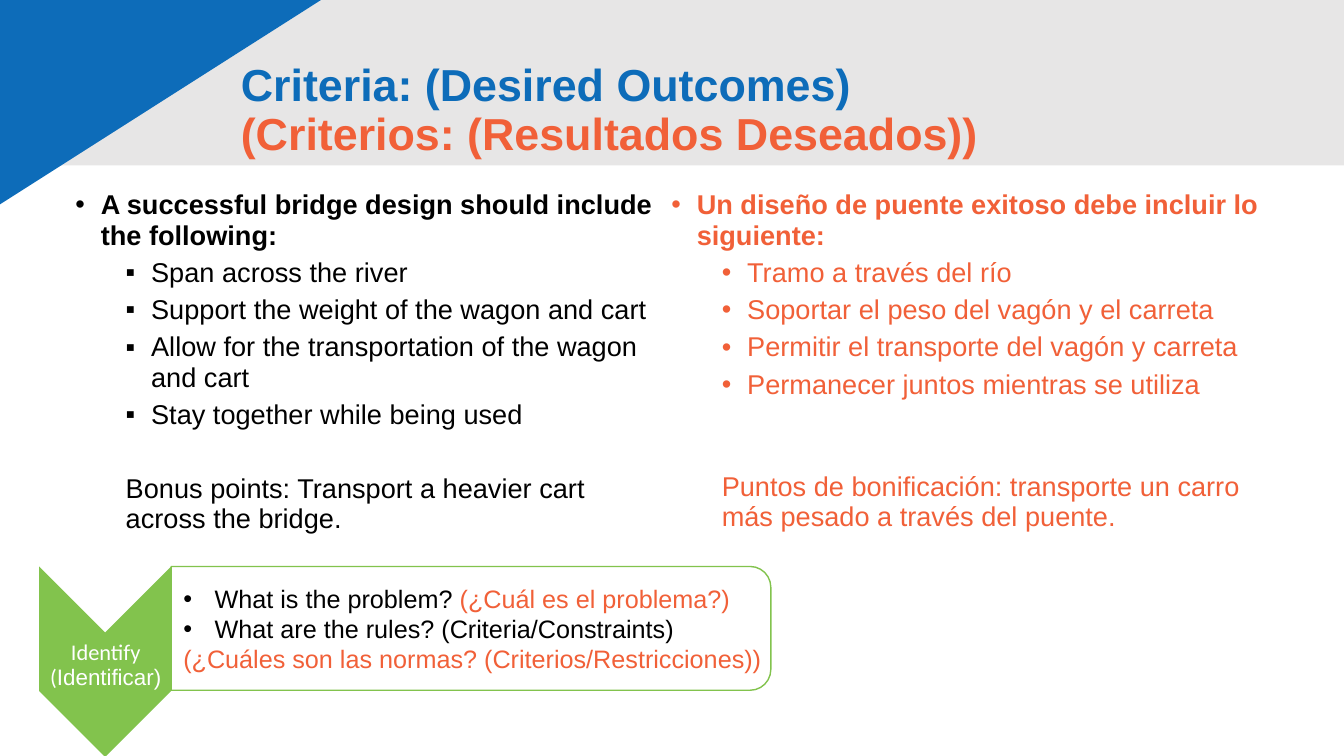
from lxml import etree
from pptx import Presentation
from pptx.dml.color import RGBColor
from pptx.enum.shapes import MSO_SHAPE
from pptx.enum.text import MSO_ANCHOR, PP_ALIGN
from pptx.oxml.ns import qn
from pptx.util import Cm, Pt

RECT = MSO_SHAPE.RECTANGLE
WEDGE = MSO_SHAPE.RIGHT_TRIANGLE
ARROW = MSO_SHAPE.CHEVRON
PANEL = MSO_SHAPE.ROUND_2_SAME_RECTANGLE
TOP, MIDDLE = MSO_ANCHOR.TOP, MSO_ANCHOR.MIDDLE
LEFT, CENTER = PP_ALIGN.LEFT, PP_ALIGN.CENTER

HUES = {"blue": "0D6CB9", "coral": "F16038", "gray": "E7E6E6",
        "green": "82C34D", "black": "000000", "white": "FFFFFF"}


class Deck:
    def __init__(self):
        self.file = Presentation()
        self.file.slide_width, self.file.slide_height = Cm(33.87), Cm(19.05)
        self.slide = self.file.slides.add_slide(self.file.slide_layouts[6])
        self.face = "Arial"

    def color(self, name):
        return RGBColor.from_string(HUES[name])

    def shape(self, kind, box, fill, turn=0, line=None, alpha=None):
        item = self.slide.shapes.add_shape(kind, *map(Cm, box))
        item.shadow.inherit = False
        item.rotation = turn
        item.fill.solid()
        item.fill.fore_color.rgb = self.color(fill)
        if alpha:
            tint = item.fill._xPr.find(".//" + qn("a:srgbClr"))
            etree.SubElement(tint, qn("a:alpha")).set("val", str(alpha * 1000))
        if line:
            item.line.color.rgb = self.color(line)
            item.line.width = Pt(1)
        else:
            item.line.fill.background()

    def text(self, box, anchor=TOP, pads=(0.25, 0.13, 0.25, 0.13)):
        frame = self.slide.shapes.add_textbox(*map(Cm, box)).text_frame
        frame.word_wrap = True
        frame.vertical_anchor = anchor
        (frame.margin_left, frame.margin_top,
         frame.margin_right, frame.margin_bottom) = map(Cm, pads)
        return frame

    def para(self, frame, parts, size, bold=False, space=1.0, before=0,
             align=LEFT, mark=None, indent=0, hang=0):
        """Each part is (text, color) or (text, color, font)."""
        first = not frame.text
        para = frame.paragraphs[0] if first else frame.add_paragraph()
        props = para._p.get_or_add_pPr()
        props.set("marL", str(Cm(indent)))
        props.set("indent", str(-Cm(hang)))
        if mark:
            etree.SubElement(props, qn("a:buFont")).set("typeface", "Arial")
            etree.SubElement(props, qn("a:buChar")).set("char", mark)
        para.alignment = align
        para.line_spacing = space
        para.space_before = Pt(0 if first else before)
        for words, hue, *face in parts:
            run = para.add_run()
            run.text = words
            run.font.name = face[0] if face else self.face
            run.font.size = Pt(size)
            run.font.bold = bold
            run.font.color.rgb = self.color(hue)
        return para

    def column(self, box, hue, mark, head, items, bonus, gap):
        frame = self.text(box)
        style = {"size": 19.4, "space": 0.93}
        self.para(frame, [(head, hue)], bold=True, mark="•",
                  indent=0.64, hang=0.64, **style)
        for item in items:
            self.para(frame, [(item, hue)], before=5, mark=mark,
                      indent=1.91, hang=0.64, **style)
        self.para(frame, [(bonus, hue)], before=gap, indent=1.27, **style)


def main():
    deck = Deck()

    # Header band and corner
    deck.shape(RECT, (0, 0, 33.87, 4.17), "gray")
    deck.shape(WEDGE, (1.47, -1.47, 5.15, 8.09), "blue", turn=90)

    # Title
    title = deck.text((5.82, 0.97, 24.64, 3.68), MIDDLE)
    for words, hue in (("Criteria: (Desired Outcomes)", "blue"),
                       ("(Criterios: (Resultados Deseados))", "coral")):
        deck.para(title, [(words, hue)], 32, bold=True, space=0.9)

    # English and Spanish columns
    columns = (
        ("black", "▪", "A successful bridge design should include the following:",
         ("Span across the river",
          "Support the weight of the wagon and cart",
          "Allow for the transportation of the wagon and cart",
          "Stay together while being used"),
         "Bonus points: Transport a heavier cart across the bridge.", 31),
        ("coral", "•", "Un diseño de puente exitoso debe incluir lo siguiente:",
         ("Tramo a través del río",
          "Soportar el peso del vagón y el carreta",
          "Permitir el transporte del vagón y carreta",
          "Permanecer juntos mientras se utiliza"),
         "Puntos de bonificación: transporte un carro más pesado a través del puente.",
         51.5),
    )
    for place, column in enumerate(columns):
        deck.column((1.65 + 15.02 * place, 4.67, 15.53, 9.5), *column)

    # Step arrow
    thin = (0.03, 0.03, 0.03, 0.03)
    deck.shape(ARROW, (0.25, 15.01, 4.8, 3.33), "green", turn=90)
    label = deck.text((1, 16.05, 3.33, 1.45), MIDDLE, thin)
    deck.para(label, [("Identify (", "white", "Calibri"),
                      ("Identificar)", "white")], 16, space=0.9, align=CENTER)

    # Question panel
    deck.shape(PANEL, (10.31, 8.28, 3.12, 15.11), "white", turn=90,
               line="green", alpha=90)
    panel = deck.text((4.32, 14.43, 15.11, 2.82), MIDDLE, (0.3, *thin[1:]))
    bullet = {"mark": "•", "indent": 0.79, "hang": 0.79}
    deck.para(panel, [("What is the problem? ", "black"),
                      ("(¿Cuál es el problema?)", "coral")], 18, **bullet)
    deck.para(panel, [("What are the rules? (Criteria/Constraints)", "black")],
              18, **bullet)
    deck.para(panel, [("(¿Cuáles son las normas? (Criterios/Restricciones))",
                       "coral")], 18)

    deck.file.save("out.pptx")


if __name__ == "__main__":
    main()
